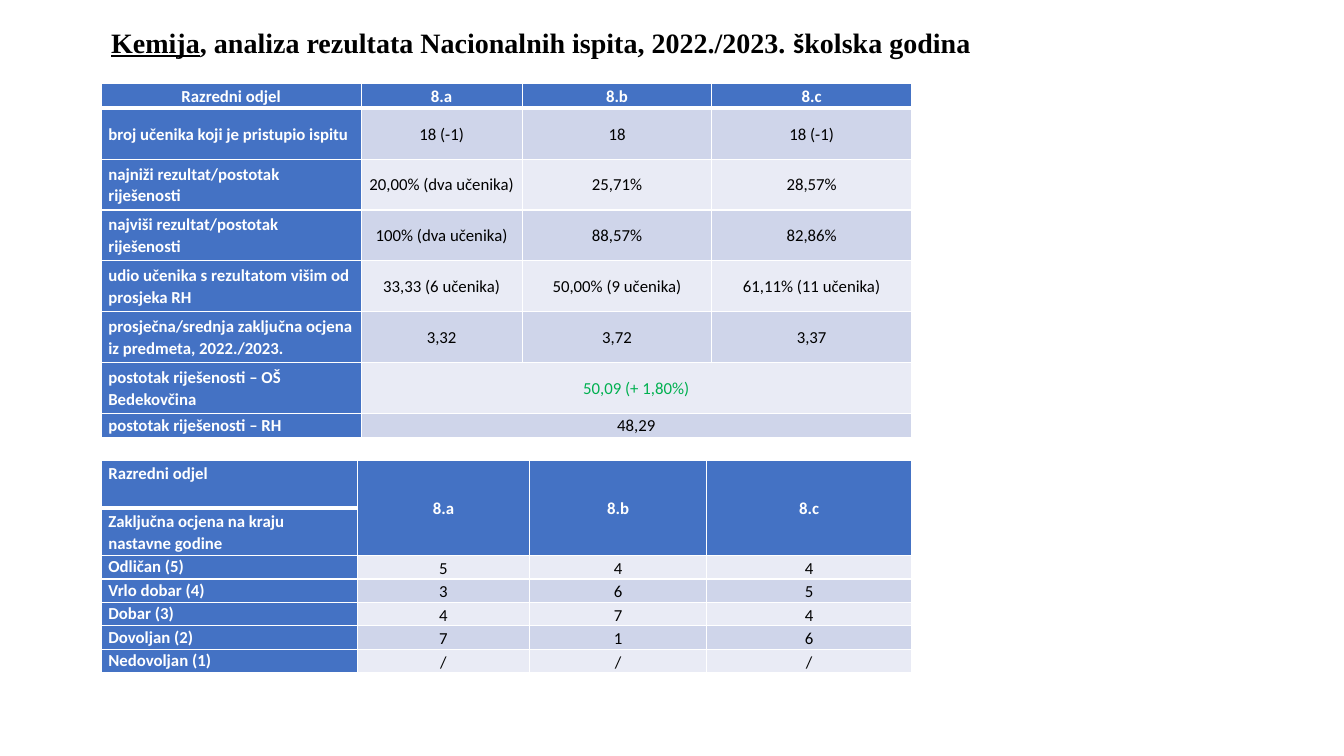
from pptx import Presentation
from pptx.dml.color import RGBColor
from pptx.enum.text import MSO_ANCHOR as ANCHOR, MSO_AUTO_SIZE as AUTO, PP_ALIGN as ALIGN
from pptx.oxml import parse_xml
from pptx.oxml.ns import nsdecls
from pptx.util import Cm, Pt

BLUE, WHITE, BLACK, GREEN = "4472C4", "FFFFFF", "000000", "00B050"
BANDS = ["E9EBF5", "CFD5EA"]


def rgb(color):
    return RGBColor.from_string(color)


def add_border(cell, side, points):
    cell._tc.get_or_add_tcPr().append(parse_xml(
        f'<a:{side} {nsdecls("a")} w="{Pt(points)}"><a:solidFill>'
        f'<a:srgbClr val="{WHITE}"/></a:solidFill></a:{side}>'))


results = [
    ["Razredni odjel", "8.a", "8.b", "8.c"],
    ["broj učenika koji je pristupio ispitu", "18 (-1)", "18", "18 (-1)"],
    ["najniži rezultat/postotak riješenosti", "20,00% (dva učenika)", "25,71%", "28,57%"],
    ["najviši rezultat/postotak riješenosti", "100% (dva učenika)", "88,57%", "82,86%"],
    ["udio učenika s rezultatom višim od prosjeka RH",
     "33,33 (6 učenika)", "50,00% (9 učenika)", "61,11% (11 učenika)"],
    ["prosječna/srednja zaključna ocjena iz predmeta, 2022./2023.", "3,32", "3,72", "3,37"],
    ["postotak riješenosti – OŠ Bedekovčina", "50,09 (+ 1,80%)", None, None],
    ["postotak riješenosti – RH", "48,29", None, None],
]
grades = [
    ["Razredni odjel", "8.a", "8.b", "8.c"],
    ["Zaključna ocjena na kraju nastavne godine", None, None, None],
    ["Odličan (5)", "5", "4", "4"],
    ["Vrlo dobar (4)", "3", "6", "5"],
    ["Dobar (3)", "4", "7", "4"],
    ["Dovoljan (2)", "7", "1", "6"],
    ["Nedovoljan (1)", "/", "/", "/"],
]
tables = [
    dict(top=2.11, rows=results, head=1,
         widths=[6.55, 4.06, 4.78, 5.03], heights=[0.62] + [1.28] * 6 + [0.62],
         merges=[(6, 1, 6, 3), (7, 1, 7, 3)],
         label_anchor=ANCHOR.MIDDLE, value_anchor=ANCHOR.MIDDLE),
    dict(top=11.6, rows=grades, head=2,
         widths=[6.46, 4.33, 4.47, 5.16], heights=[1.2] * 2 + [0.59] * 5,
         merges=[(0, c, 1, c) for c in (1, 2, 3)],
         label_anchor=ANCHOR.TOP, value_anchor=ANCHOR.BOTTOM),
]

prs = Presentation()
prs.slide_width, prs.slide_height = Cm(33.87), Cm(19.05)
s = prs.slides.add_slide(prs.slide_layouts[5])

title = s.shapes.title
title.left, title.top, title.width, title.height = Cm(2.55), Cm(0.48), Cm(26.97), Cm(1.88)
tf = title.text_frame
tf.auto_size = AUTO.NONE
tf.word_wrap = True
tf.vertical_anchor = ANCHOR.TOP
tf.margin_left = tf.margin_right = Cm(0.25)
tf.margin_top = Cm(0.15)
p = tf.paragraphs[0]
p.alignment = ALIGN.LEFT
p.font.size, p.font.bold = Pt(20), True
p.font.color.rgb = rgb(BLACK)
for text, font, underline in [
    ("Kemija", "Times New Roman", True),
    (", analiza rezultata Nacionalnih ispita, 2022./2023. ", "Times New Roman", False),
    ("š", "Calibri", False),
    ("kolska godina", "Times New Roman", False),
]:
    r = p.add_run()
    r.text = text
    r.font.name, r.font.underline = font, underline

for t in tables:
    rows, head, widths, heights = t["rows"], t["head"], t["widths"], t["heights"]
    table = s.shapes.add_table(len(rows), len(widths), Cm(2.55), Cm(t["top"]),
                               Cm(sum(widths)), Cm(sum(heights))).table
    table.first_row = table.horz_banding = False
    for column, width in zip(table.columns, widths):
        column.width = Cm(width)
    for row, height in zip(table.rows, heights):
        row.height = Cm(height)

    for i, row in enumerate(rows):
        for j, text in enumerate(row):
            cell = table.cell(i, j)
            is_label = j == 0
            is_head = i < head
            is_blue = is_head or is_label
            thick_row = 0 if is_label else head - 1
            for side in ("lnL", "lnR", "lnT"):
                add_border(cell, side, 1)
            add_border(cell, "lnB", 3 if i == thick_row else 1)
            cell.fill.solid()
            cell.fill.fore_color.rgb = rgb(BLUE if is_blue else BANDS[i % 2])
            if text is None:
                continue
            cell.margin_left = cell.margin_right = Cm(0.18)
            cell.margin_top = Cm(0.05 if is_label and i < head - 1 else 0)
            cell.margin_bottom = 0
            if is_label:
                cell.vertical_anchor = ANCHOR.MIDDLE if i == head - 1 else t["label_anchor"]
            else:
                cell.vertical_anchor = ANCHOR.MIDDLE if is_head else t["value_anchor"]
            p = cell.text_frame.paragraphs[0]
            p.text = text
            p.line_spacing = 1.07
            p.alignment = ALIGN.LEFT if is_label and (i or head > 1) else ALIGN.CENTER
            p.font.name, p.font.size = "Calibri", Pt(12)
            p.font.bold = is_blue
            p.font.color.rgb = rgb(WHITE if is_blue else GREEN if "(+" in text else BLACK)

    for top, left, bottom, right in t["merges"]:
        table.cell(top, left).merge(table.cell(bottom, right))

prs.save("out.pptx")
